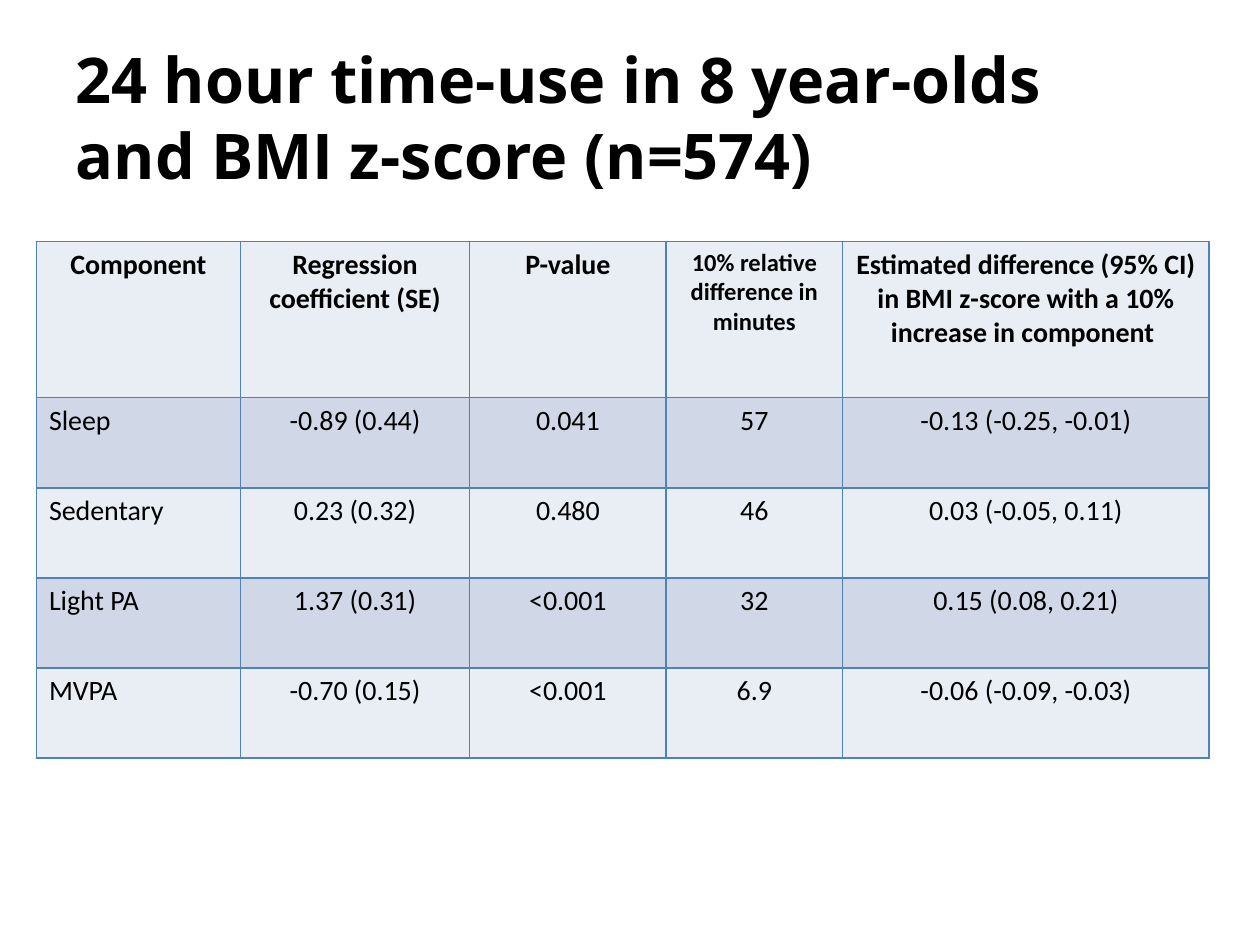
from lxml import etree
from pptx import Presentation
from pptx.dml.color import RGBColor
from pptx.enum import text
from pptx.oxml import ns
from pptx.util import Pt

TITLE = "24 hour time-use in 8 year-olds \vand BMI z-score (n=574)"
ROWS = [
    ("Component", "Regression coefficient (SE)", "P-value",
     "10% relative difference in minutes",
     "Estimated difference (95% CI) in BMI z-score with a 10% increase in component "),
    ("Sleep", "-0.89 (0.44)", "0.041", "57", "-0.13 (-0.25, -0.01)"),
    ("Sedentary", "0.23 (0.32)", "0.480", "46", "0.03 (-0.05, 0.11)"),
    ("Light PA", "1.37 (0.31)", "<0.001", "32", "0.15 (0.08, 0.21)"),
    ("MVPA", "-0.70 (0.15)", "<0.001", "6.9", "-0.06 (-0.09, -0.03)"),
]
WIDTHS = [116.6, 131, 112.3, 100.8, 209.5]
HEIGHTS = [89.3] + [51.5] * 4
COLORS = {"ink": "000000", "line": "4F81BD", "pale": "E9EDF4", "band": "D0D8E8"}


def color(name):
    return RGBColor.from_string(COLORS[name])


def style(para, face, size, bold, align):
    para.alignment = align
    font = para.font
    font.name, font.size, font.bold = face, Pt(size), bold
    font.color.rgb = color("ink")


def border(cell):
    props = cell._tc.get_or_add_tcPr()
    for side in ("lnL", "lnR", "lnT", "lnB"):
        line = etree.SubElement(props, ns.qn("a:" + side), w=str(Pt(1)))
        fill = etree.SubElement(line, ns.qn("a:solidFill"))
        etree.SubElement(fill, ns.qn("a:srgbClr"), val=COLORS["line"])


def add_title(slide):
    title = slide.shapes.title
    title.left, title.top, title.width, title.height = map(Pt, (36, 21.6, 648, 90))
    frame = title.text_frame
    frame.text = TITLE
    frame.word_wrap = True
    frame.auto_size = text.MSO_AUTO_SIZE.NONE
    frame.vertical_anchor = text.MSO_ANCHOR.MIDDLE
    style(frame.paragraphs[0], "Open Sans", 36, True, text.PP_ALIGN.LEFT)


def add_grid(slide):
    grid = slide.shapes.add_table(
        len(ROWS), len(WIDTHS), Pt(20.8), Pt(138),
        Pt(sum(WIDTHS)), Pt(sum(HEIGHTS))).table
    for col, width in zip(grid.columns, WIDTHS):
        col.width = Pt(width)
    for row, height in zip(grid.rows, HEIGHTS):
        row.height = Pt(height)
    for r, row in enumerate(ROWS):
        for c, label in enumerate(row):
            cell = grid.cell(r, c)
            cell.text = label
            head = r == 0
            size = 14 if head and c == 3 else 16
            align = text.PP_ALIGN.CENTER if head or c else text.PP_ALIGN.LEFT
            style(cell.text_frame.paragraphs[0], "Calibri", size, head, align)
            border(cell)
            cell.fill.solid()
            cell.fill.fore_color.rgb = color("band" if r % 2 else "pale")


def main():
    deck = Presentation()
    deck.slide_width, deck.slide_height = Pt(720), Pt(540)
    slide = deck.slides.add_slide(deck.slide_layouts[5])
    add_title(slide)
    add_grid(slide)
    deck.save("out.pptx")


if __name__ == "__main__":
    main()
